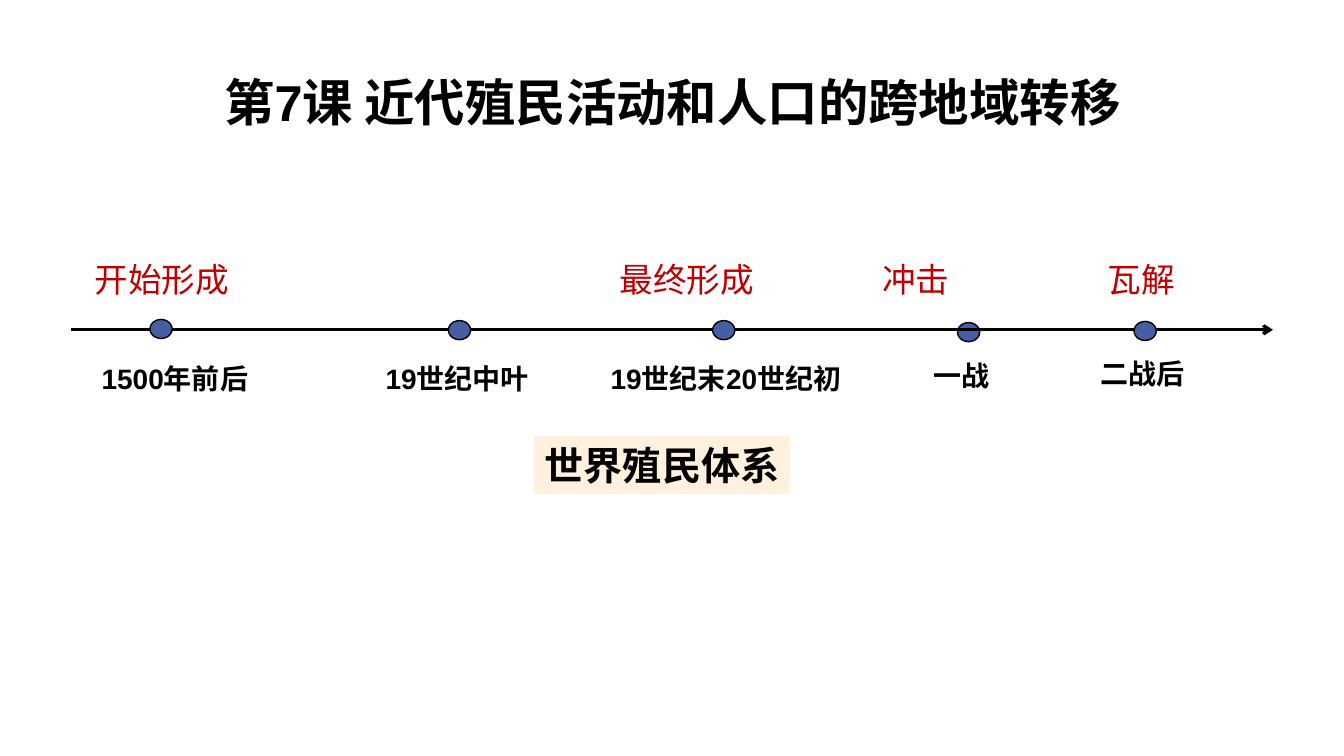
"""Build a timeline slide on the rise and fall of the world colonial system."""
from pptx import Presentation
from pptx.dml.color import RGBColor
from pptx.enum.shapes import MSO_CONNECTOR, MSO_SHAPE
from pptx.enum.text import MSO_ANCHOR, PP_ALIGN
from pptx.oxml.ns import qn
from pptx.util import Cm, Pt
from lxml import etree

OVAL, RECTANGLE = MSO_SHAPE.OVAL, MSO_SHAPE.RECTANGLE
STRAIGHT = MSO_CONNECTOR.STRAIGHT
TOP, MIDDLE = MSO_ANCHOR.TOP, MSO_ANCHOR.MIDDLE
LEFT, CENTER = PP_ALIGN.LEFT, PP_ALIGN.CENTER

BLACK, RED, BLUE, CREAM = "000000", "C00000", "465EA4", "FFF1DD"

TITLE = "第7课 近代殖民活动和人口的跨地域转移"
TOPIC = "世界殖民体系"
TITLE_BOX = (1.22, 1.19, 31.45, 2.26)
TOPIC_BOX = (13.46, 11, 6.45, 1.45)
AXIS = (1.8, 32.08, 8.31)
DOT_SIZE = (0.56, 0.48)
DATE_HEIGHT = 1.12
PHASE_TOP, PHASE_WIDTH, PHASE_HEIGHT = 6.4, 4.2, 1.27

# Each date: text, left, top, width.
DATES = [
    ("1500年前后", 2.31, 8.99, 4.24),
    ("19世纪中叶", 9.47, 8.99, 4.24),
    ("19世纪末20世纪初", 15.14, 8.99, 6.45),
    ("一战", 23.27, 8.92, 6.45),
    ("二战后", 27.48, 8.86, 6.45),
]
PHASES = [("开始形成", 2.14), ("最终形成", 15.37), ("冲击", 21.98), ("瓦解", 27.66)]
DOTS_BEHIND = [(24.13, 8.13)]
DOTS_IN_FRONT = [(3.78, 8.05), (11.3, 8.08), (17.96, 8.08), (28.58, 8.1)]

TITLE_FONT = {"size": Pt(36), "bold": True, "name": "Arial"}
TOPIC_FONT = {"size": Pt(28), "bold": True, "name": "Arial"}
DATE_FONT = {"size": Pt(20), "bold": True, "name": "Arial"}
PHASE_FONT = {"size": Pt(24), "bold": False, "name": "Noto Sans CJK JP"}


def color(value):
    return RGBColor.from_string(value)


def write(shape, text, font, east_asian, text_color=BLACK, align=LEFT, anchor=TOP, wrap=True):
    frame = shape.text_frame
    frame.word_wrap = wrap
    frame.vertical_anchor = anchor
    paragraph = frame.paragraphs[0]
    paragraph.alignment = align
    run = paragraph.add_run()
    run.text = text
    for name, value in font.items():
        setattr(run.font, name, value)
    run.font.color.rgb = color(text_color)
    properties = run.font._element
    etree.SubElement(properties, qn("a:ea")).set("typeface", east_asian)
    return paragraph


def add_label(slide, box, *text_format):
    shape = slide.shapes.add_textbox(*map(Cm, box))
    write(shape, *text_format)


def add_filled(slide, kind, box, fill):
    shape = slide.shapes.add_shape(kind, *map(Cm, box))
    shape.shadow.inherit = False
    shape.fill.solid()
    shape.fill.fore_color.rgb = color(fill)
    return shape


def add_dots(slide, positions):
    for position in positions:
        dot = add_filled(slide, OVAL, position + DOT_SIZE, BLUE)
        dot.line.color.rgb = color(BLACK)
        dot.line.width = Pt(1)


def add_axis(slide):
    start, end, height = map(Cm, AXIS)
    axis = slide.shapes.add_connector(STRAIGHT, start, height, end, height)
    axis.line.color.rgb = color(BLACK)
    axis.line.width = Pt(2.25)
    etree.SubElement(axis.line._get_or_add_ln(), qn("a:tailEnd")).set("type", "arrow")
    etree.SubElement(axis._element.spPr, qn("a:effectLst"))


def add_title(slide):
    title = slide.shapes.title
    for name, value in zip(("left", "top", "width", "height"), TITLE_BOX):
        setattr(title, name, Cm(value))
    paragraph = write(title, TITLE, TITLE_FONT, "Noto Sans CJK SC", BLACK, CENTER, MIDDLE)
    paragraph.line_spacing = 1.3


def main():
    presentation = Presentation()
    presentation.slide_width, presentation.slide_height = Cm(33.87), Cm(19.05)
    slide = presentation.slides.add_slide(presentation.slide_layouts[5])
    add_title(slide)
    add_dots(slide, DOTS_BEHIND)
    add_axis(slide)
    add_dots(slide, DOTS_IN_FRONT)
    for text, left, top, width in DATES:
        add_label(slide, (left, top, width, DATE_HEIGHT), text, DATE_FONT, "Arial")
    for text, left in PHASES:
        box = (left, PHASE_TOP, PHASE_WIDTH, PHASE_HEIGHT)
        add_label(slide, box, text, PHASE_FONT, "Noto Sans CJK JP", RED)
    topic = add_filled(slide, RECTANGLE, TOPIC_BOX, CREAM)
    topic.line.fill.background()
    write(topic, TOPIC, TOPIC_FONT, "Noto Sans CJK SC", BLACK, CENTER, MIDDLE, False)
    presentation.save("out.pptx")


if __name__ == "__main__":
    main()
